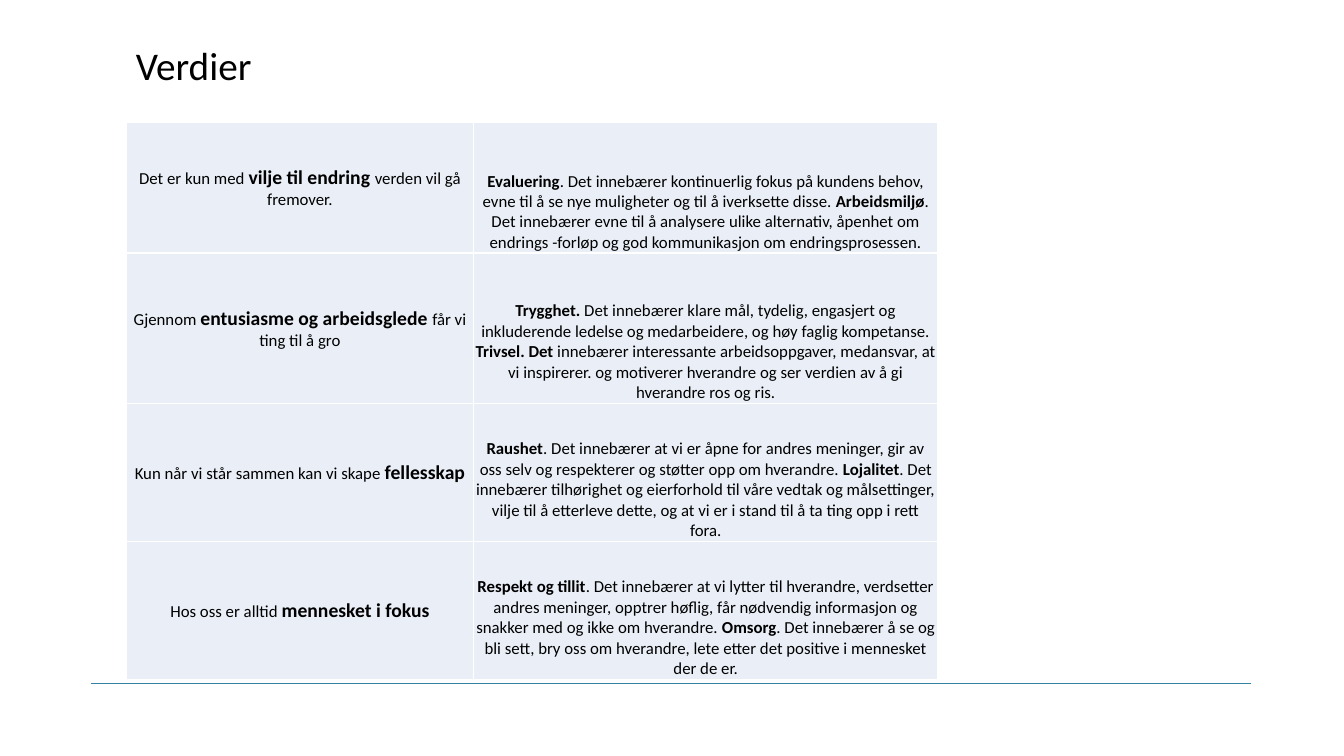
from lxml import etree
from pptx import Presentation
from pptx.dml.color import RGBColor as Rgb
from pptx.enum.shapes import MSO_CONNECTOR as Link
from pptx.enum.text import MSO_ANCHOR as Anchor, PP_ALIGN as Align
from pptx.oxml.ns import qn
from pptx.util import Inches, Pt

TITLE = "Verdier"
ROWS = [
    (
        ["Det er kun med ", "vilje til endring ", "verden vil gå fremover."],
        ["Evaluering",
         ". Det innebærer kontinuerlig fokus på kundens behov, evne til å se nye muligheter og til å iverksette disse. ",
         "Arbeidsmiljø",
         ". Det innebærer evne til å analysere ulike alternativ, åpenhet om endrings -forløp og god kommunikasjon om endringsprosessen."],
    ),
    (
        ["Gjennom ", "entusiasme og arbeidsglede ", "får vi ting til å gro"],
        ["Trygghet. ",
         "Det innebærer klare mål, tydelig, engasjert og inkluderende ledelse og medarbeidere, og høy faglig kompetanse. ",
         "Trivsel. Det ",
         "innebærer interessante arbeidsoppgaver, medansvar, at vi inspirerer. og motiverer hverandre og ser verdien av å gi hverandre ros og ris."],
    ),
    (
        ["Kun når vi står sammen kan vi skape ", "fellesskap"],
        ["Raushet",
         ". Det innebærer at vi er åpne for andres meninger, gir av oss selv og respekterer og støtter opp om hverandre. ",
         "Lojalitet",
         ". Det innebærer tilhørighet og eierforhold til våre vedtak og målsettinger, vilje til å etterleve dette, og at vi er i stand til å ta ting opp i rett fora."],
    ),
    (
        ["Hos oss er alltid ", "mennesket i fokus"],
        ["Respekt og tillit",
         ". Det innebærer at vi lytter til hverandre, verdsetter andres meninger, opptrer høflig, får nødvendig informasjon og snakker med og ikke om hverandre. ",
         "Omsorg",
         ". Det innebærer å se og bli sett, bry oss om hverandre, lete etter det positive i mennesket der de er."],
    ),
]
WIDTHS = [3.45, 4.6]
HEIGHTS = [1.3, 1.49, 1.37, 1.37]
LEFT, TOP = 1.25, 1.21
THEME = {
    "font": "Calibri", "text": "000000", "fill": "EAEFF7",
    "edge": "FFFFFF", "rule": "3682A2",
    "title": 28, "body": 12, "key": 14,
}


def style(run, size, bold=False):
    font = run.font
    font.name = THEME["font"]
    font.size = Pt(size)
    font.bold = bold
    font.color.rgb = Rgb.from_string(THEME["text"])


def edge(cell):
    props = cell._tc.get_or_add_tcPr()
    for side in ("lnL", "lnR", "lnT", "lnB"):
        line = etree.SubElement(props, qn("a:" + side), w=str(Pt(1)))
        fill = etree.SubElement(line, qn("a:solidFill"))
        etree.SubElement(fill, qn("a:srgbClr"), val=THEME["edge"])


def write(cell, parts, first):
    edge(cell)
    cell.fill.solid()
    cell.fill.fore_color.rgb = Rgb.from_string(THEME["fill"])
    cell.margin_left = cell.margin_right = cell.margin_top = Inches(0.01)
    cell.margin_bottom = 0
    cell.vertical_anchor = Anchor.MIDDLE if first else Anchor.BOTTOM
    para = cell.text_frame.paragraphs[0]
    para.alignment = Align.CENTER
    for i, part in enumerate(parts):
        run = para.add_run()
        run.text = part
        bold = (i % 2 == 1) == first
        style(run, THEME["key" if first and bold else "body"], bold)


def main():
    deck = Presentation()
    deck.slide_width, deck.slide_height = Inches(13.33), Inches(7.5)
    shapes = deck.slides.add_slide(deck.slide_layouts[6]).shapes

    rule = shapes.add_connector(
        Link.STRAIGHT, Inches(0.9), Inches(6.78), Inches(12.41), Inches(6.78))
    rule.line.color.rgb = Rgb.from_string(THEME["rule"])
    rule.line.width = Pt(0.15)
    etree.SubElement(rule._element.spPr, qn("a:effectLst"))

    table = shapes.add_table(
        len(ROWS), len(WIDTHS), Inches(LEFT), Inches(TOP),
        Inches(sum(WIDTHS)), Inches(sum(HEIGHTS))).table
    table.first_row = table.horz_banding = False
    for col, width in zip(table.columns, WIDTHS):
        col.width = Inches(width)
    for r, (height, row) in enumerate(zip(HEIGHTS, ROWS)):
        table.rows[r].height = Inches(height)
        for c, parts in enumerate(row):
            write(table.cell(r, c), parts, c == 0)

    frame = shapes.add_textbox(
        Inches(LEFT), Inches(0.41), Inches(5.67), Inches(0.72)).text_frame
    frame.word_wrap = True
    frame.text = TITLE
    para = frame.paragraphs[0]
    para.line_spacing = 0.9
    style(para.runs[0], THEME["title"])

    deck.save("out.pptx")


if __name__ == "__main__":
    main()
